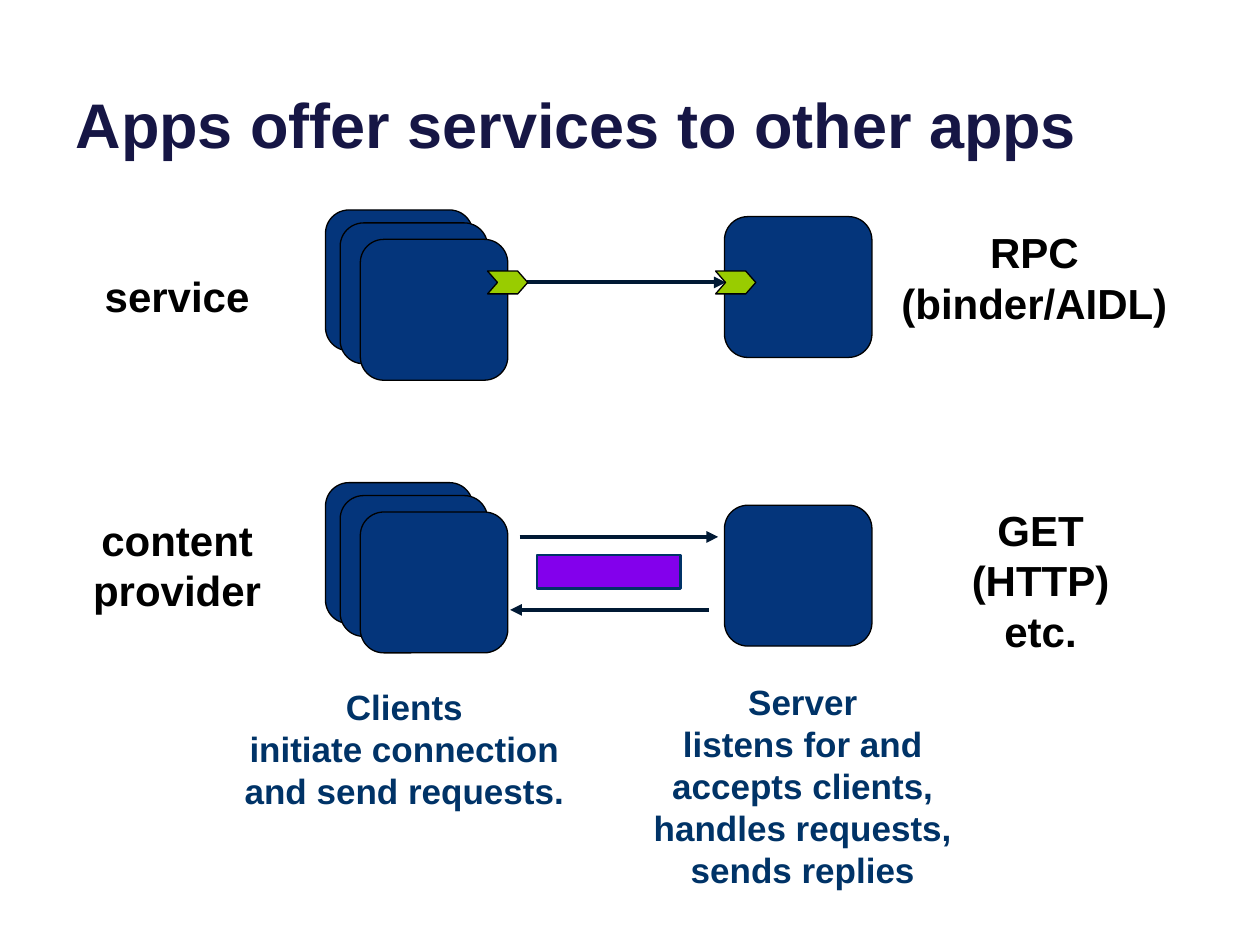
from lxml.etree import SubElement
from pptx import Presentation
from pptx.dml.color import RGBColor
from pptx.enum.shapes import MSO_CONNECTOR, MSO_SHAPE
from pptx.enum.text import MSO_ANCHOR, MSO_AUTO_SIZE, PP_ALIGN
from pptx.oxml.ns import qn
from pptx.util import Pt

TITLE_NAVY = RGBColor(0x16, 0x16, 0x45)
APP_BLUE = RGBColor(0x04, 0x35, 0x7B)
PORT_GREEN = RGBColor(0x99, 0xCC, 0x00)
DATA_PURPLE = RGBColor(0x83, 0x00, 0xEC)
CAPTION_BLUE = RGBColor(0x00, 0x33, 0x67)
ARROW_NAVY = RGBColor(0x00, 0x19, 0x34)
BLACK = RGBColor(0, 0, 0)

APP_SIZE = (84.3, 80.5)
CLIENT_OFFSETS = [(0, 0), (8.4, 7.4), (19.9, 16.8)]
CLIENT_LEFT, SERVER_LEFT = 186, 414

presentation = Presentation()
presentation.slide_width, presentation.slide_height = Pt(720), Pt(540)
slide = presentation.slides.add_slide(presentation.slide_layouts[5])


def add_block(preset, left, top, size, fill, line=BLACK, weight=0.75):
    block = slide.shapes.add_shape(preset, Pt(left), Pt(top), *map(Pt, size))
    block.shadow.inherit = False
    block.fill.solid()
    block.fill.fore_color.rgb = fill
    block.line.color.rgb = line
    block.line.width = Pt(weight)
    return block


def add_arrow(start, end, y):
    arrow = slide.shapes.add_connector(
        MSO_CONNECTOR.STRAIGHT, Pt(start), Pt(y), Pt(end), Pt(y))
    arrow.line.color.rgb = ARROW_NAVY
    arrow.line.width = Pt(2.25)
    SubElement(arrow.line._get_or_add_ln(), qn("a:tailEnd"), type="triangle")
    SubElement(arrow._element.spPr, qn("a:effectLst"))


title = slide.shapes.title
title.left, title.top, title.width, title.height = Pt(36), Pt(-26.5), Pt(648), Pt(122.4)
title.text_frame.vertical_anchor = MSO_ANCHOR.BOTTOM
title.text_frame.auto_size = MSO_AUTO_SIZE.NONE
heading = title.text_frame.paragraphs[0]
heading.alignment = PP_ALIGN.LEFT
heading_run = heading.add_run()
heading_run.text = "Apps offer services to other apps"
heading_run.font.name = "Arial"
heading_run.font.size = Pt(36)
heading_run.font.bold = True
heading_run.font.color.rgb = TITLE_NAVY

# Rows: service, content provider
for server_top, clients_top in [(123.8, 120), (288.7, 275.8)]:
    add_block(MSO_SHAPE.ROUNDED_RECTANGLE, SERVER_LEFT, server_top, APP_SIZE, APP_BLUE)
    for dx, dy in CLIENT_OFFSETS:
        add_block(MSO_SHAPE.ROUNDED_RECTANGLE, CLIENT_LEFT + dx, clients_top + dy,
                  APP_SIZE, APP_BLUE)

# Service: one connection between two ports
add_arrow(301, 414.7, 161.4)
for port_left in (278.6, 408.9):
    port = add_block(MSO_SHAPE.CHEVRON, port_left, 154.9, (23, 13), PORT_GREEN)
    port.adjustments[0] = 0.44

# Content provider: request, data and reply
add_arrow(297, 410.4, 306.8)
add_arrow(405, 291.5, 348.5)
add_block(MSO_SHAPE.RECTANGLE, 306.8, 317.2, (82.2, 19), DATA_PURPLE, CAPTION_BLUE, 1.5)

captions = [
    (498.2, 126, 185.8, 65.5, 24, BLACK, ["RPC", "(binder/AIDL)"]),
    (528, 284.6, 133.2, 94.5, 24, BLACK, ["GET (HTTP)", "etc."]),
    (34.6, 151.2, 133.2, 36.5, 24, BLACK, ["service"]),
    (34.6, 290.4, 133.2, 65.5, 24, BLACK, ["content provider"]),
    (120.2, 388.1, 221.8, 80, 20, CAPTION_BLUE,
     ["Clients", "initiate connection and send requests."]),
    (347.8, 385.2, 221.8, 129, 20, CAPTION_BLUE,
     ["Server", "listens for and accepts clients, handles requests, sends replies"]),
]
for left, top, width, height, size, color, lines in captions:
    caption = slide.shapes.add_textbox(Pt(left), Pt(top), Pt(width), Pt(height)).text_frame
    caption.word_wrap = True
    caption.auto_size = MSO_AUTO_SIZE.SHAPE_TO_FIT_TEXT
    for index, line in enumerate(lines):
        paragraph = caption.add_paragraph() if index else caption.paragraphs[0]
        paragraph.alignment = PP_ALIGN.CENTER
        run = paragraph.add_run()
        run.text = line
        run.font.name = "Arial"
        run.font.size = Pt(size)
        run.font.bold = True
        run.font.color.rgb = color

presentation.save("out.pptx")
